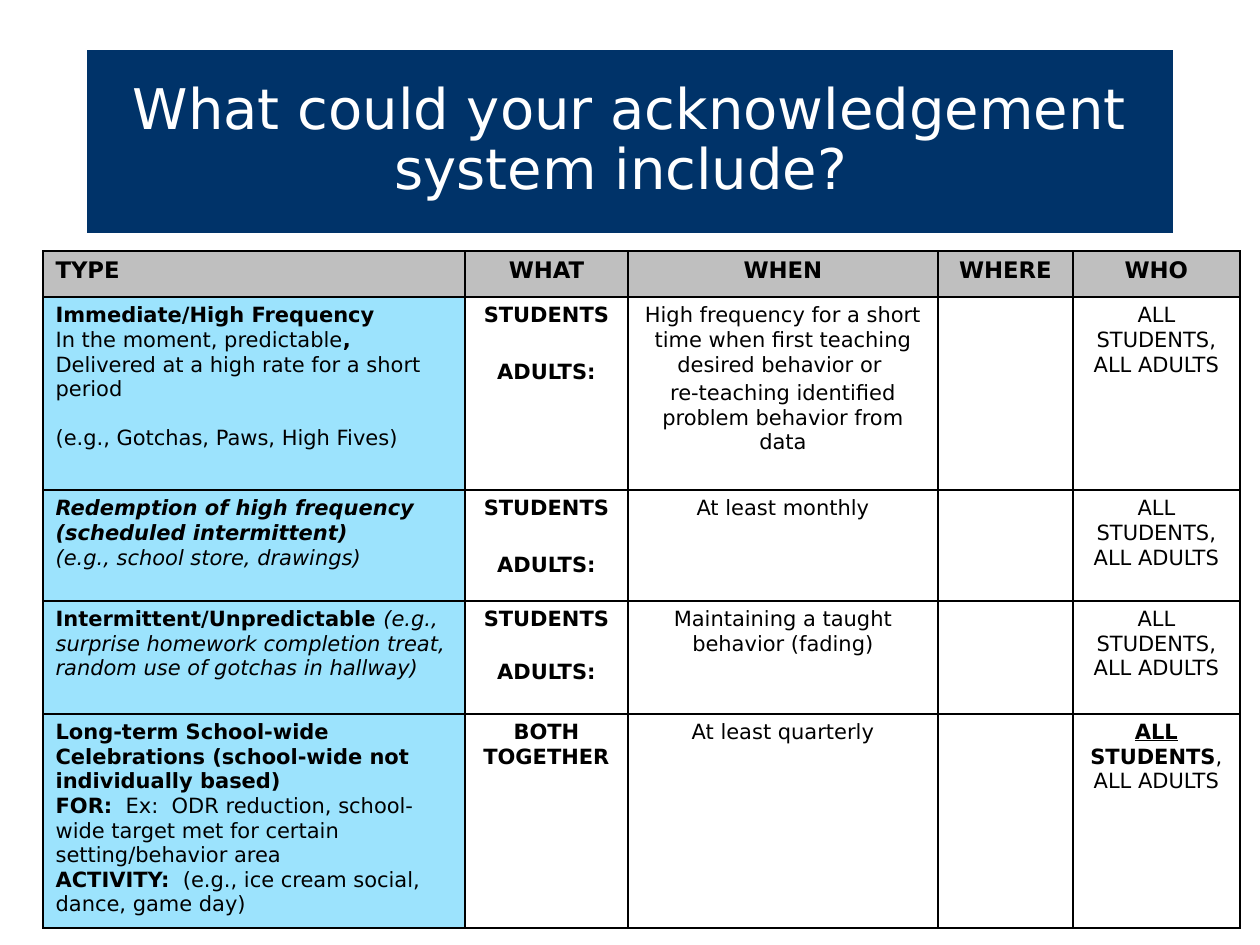
from dataclasses import dataclass

from lxml import etree
from pptx import Presentation
from pptx import util as u
from pptx.dml.color import RGBColor
from pptx.enum import text
from pptx.oxml import ns

PX = 914400 / 126
FONT = "DejaVu Sans"
HUES = {"navy": "003369", "grey": "BFBFBF", "sky": "9CE3FD",
        "white": "FFFFFF", "black": "000000"}


@dataclass
class Run:
    words: str
    bold: bool = False
    ital: bool = False
    under: bool = False


@dataclass
class Para:
    runs: list[Run]
    gap: float = 0  # points before


@dataclass
class Row:
    high: int
    kind: list[Para]
    what: list[Para]
    when: list[Para]
    who: list[Para]
    fill: str | None = None


def px(n: int) -> u.Emu:
    return u.Emu(round(n * PX))


def hue(name: str) -> RGBColor:
    return RGBColor.from_string(HUES[name])


def line(words: str, gap: float = 0, **style: bool) -> Para:
    return Para([Run(words, **style)], gap)


def write(frame, paras: list[Para], *, size: int = 12, color: str = "black",
          center: bool = True, lead: float | None = None) -> None:
    for i, item in enumerate(paras):
        para = frame.add_paragraph() if i else frame.paragraphs[0]
        para.alignment = text.PP_ALIGN.CENTER if center else text.PP_ALIGN.LEFT
        para.space_before = u.Pt(item.gap)
        if lead:
            para.line_spacing = lead
        for part in item.runs:
            run = para.add_run()
            run.text = part.words
            font = run.font
            font.name, font.size = FONT, u.Pt(size)
            font.bold, font.italic = part.bold, part.ital
            font.underline = part.under
            font.color.rgb = hue(color)


def edge(cell) -> None:
    """Rule all four sides of a cell in thin black."""
    props = cell._tc.get_or_add_tcPr()
    for side in ("lnL", "lnR", "lnT", "lnB"):
        rule = etree.SubElement(props, ns.qn(f"a:{side}"), w=str(u.Pt(1)))
        fill = etree.SubElement(rule, ns.qn("a:solidFill"))
        etree.SubElement(fill, ns.qn("a:srgbClr"), val=HUES["black"])


def paint(cell, color: str | None) -> None:
    if color:
        cell.fill.solid()
        cell.fill.fore_color.rgb = hue(color)
    else:
        cell.fill.background()


def pair(gap: float) -> list[Para]:
    return [line("STUDENTS", bold=True), line("ADULTS:", gap, bold=True)]


HEADS = ["TYPE", "WHAT", "WHEN", "WHERE", "WHO"]
WIDTHS = [422, 163, 310, 135, 167]
HEAD = 46
ALL = [line("ALL STUDENTS, ALL ADULTS")]
ROWS = [
    Row(193,
        [line("Immediate/High Frequency", bold=True),
         Para([Run("In the moment, predictable"), Run(", ", bold=True),
               Run("Delivered at a high rate for a short period")]),
         line("(e.g., Gotchas, Paws, High Fives)", 14)],
        pair(18.5),
        [line("High frequency for a short time when first teaching "
              "desired behavior or "),
         line("re-teaching identified problem behavior from data", 2.2)],
        ALL),
    Row(111,
        [line("Redemption of high frequency (scheduled intermittent)",
              bold=True, ital=True),
         line("(e.g., school store, drawings)", ital=True)],
        pair(18.5), [line("At least monthly")], ALL),
    Row(113,
        [Para([Run("Intermittent/Unpredictable ", bold=True),
               Run("(e.g., surprise homework completion treat, "
                   "random use of gotchas in hallway)", ital=True)])],
        pair(16.2), [line("Maintaining a taught behavior (fading)")], ALL,
        "white"),
    Row(214,
        [line("Long-term School-wide Celebrations "
              "(school-wide not individually based)", bold=True),
         Para([Run("FOR:", bold=True),
               Run("  Ex:  ODR reduction, school-wide target met "
                   "for certain setting/behavior area")]),
         Para([Run("ACTIVITY:", bold=True),
               Run("  (e.g., ice cream social, dance, game day)")])],
        [line("BOTH TOGETHER", bold=True)], [line("At least quarterly")],
        [Para([Run("ALL", bold=True, under=True),
               Run(" STUDENTS", bold=True), Run(", ALL ADULTS")])],
        "white"),
]


def add_title(slide) -> None:
    title = slide.shapes.title
    title.left, title.top = px(87), px(50)
    title.width, title.height = px(1086), px(183)
    title.fill.solid()
    title.fill.fore_color.rgb = hue("navy")
    frame = title.text_frame
    frame.word_wrap = True
    frame.auto_size = text.MSO_AUTO_SIZE.NONE
    frame.vertical_anchor = text.MSO_ANCHOR.MIDDLE
    write(frame, [line("What could your acknowledgement system include? ")],
          size=32, color="white", lead=0.9)


def add_grid(slide) -> None:
    highs = [HEAD] + [row.high for row in ROWS]
    grid = slide.shapes.add_table(len(highs), len(WIDTHS), px(43), px(251),
                                  px(sum(WIDTHS)), px(sum(highs))).table
    grid.first_row = grid.horz_banding = False
    for col, wide in zip(grid.columns, WIDTHS):
        col.width = px(wide)
    for row, high in zip(grid.rows, highs):
        row.height = px(high)
    for cell in grid.iter_cells():
        edge(cell)
    for c, head in enumerate(HEADS):
        cell = grid.cell(0, c)
        paint(cell, "grey")
        write(cell.text_frame, [line(head, bold=True)], size=13, center=c > 0)
    for r, row in enumerate(ROWS, 1):
        for c, paras in enumerate([row.kind, row.what, row.when, [], row.who]):
            cell = grid.cell(r, c)
            paint(cell, row.fill if c else "sky")
            write(cell.text_frame, paras, center=c > 0)


def main() -> None:
    deck = Presentation()
    deck.slide_width, deck.slide_height = u.Inches(10), u.Inches(7.5)
    slide = deck.slides.add_slide(deck.slide_layouts[5])
    add_title(slide)
    add_grid(slide)
    deck.save("out.pptx")


if __name__ == "__main__":
    main()
